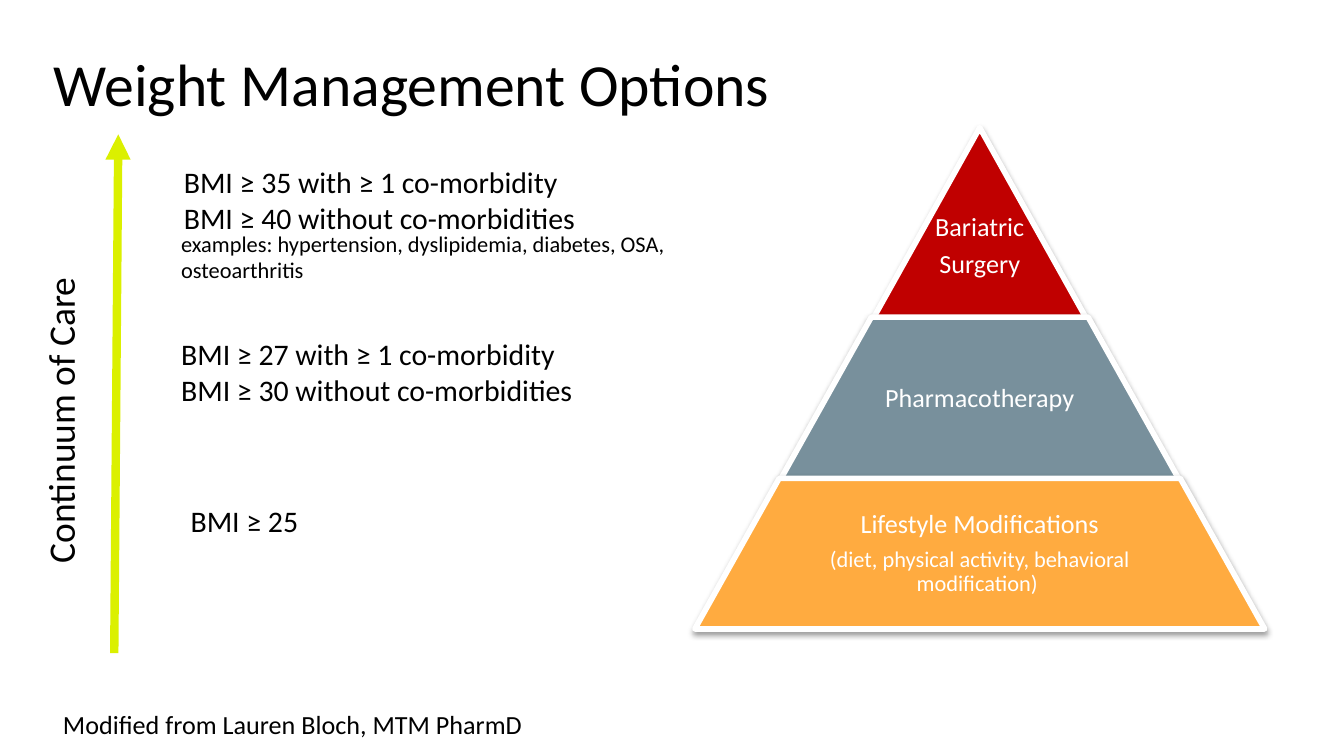
from lxml import etree
from pptx import Presentation
from pptx import util as u
from pptx.dml.color import RGBColor
from pptx.enum import shapes, text
from pptx.oxml import ns

COLORS = {"ink": "000000", "white": "FFFFFF", "arrow": "DBF000",
          "surgery": "C00000", "drugs": "78909C", "lifestyle": "FFAB40"}
FONT = "Calibri"
SLOPE = 0.56  # horizontal run of the pyramid's sides per unit of height
SLIDE_WIDTH = 10
SLIDE_HEIGHT = SLIDE_WIDTH * 9 / 16


def rgb(name):
    return RGBColor.from_string(COLORS[name])


def add_effects(shape, shadow=False):
    """Replace inherited effects with none, or with a soft drop shadow."""
    effects = etree.SubElement(shape._element.spPr, ns.qn("a:effectLst"))
    if shadow:
        drop = etree.SubElement(effects, ns.qn("a:outerShdw"), blurRad=str(u.Pt(3.1)),
                                dist=str(u.Pt(1.6)), dir="5400000", rotWithShape="0")
        black = etree.SubElement(drop, ns.qn("a:srgbClr"), val=COLORS["ink"])
        etree.SubElement(black, ns.qn("a:alpha"), val="38000")


def add_text(slide, box, paragraphs, color="ink", margins=(0.1, 0.05),
             wrap=True, anchor=text.MSO_ANCHOR.TOP, **paragraph_format):
    """Place (words, size) paragraphs in a text box."""
    label = slide.shapes.add_textbox(*map(u.Inches, box))
    frame = label.text_frame
    across, down = map(u.Inches, margins)
    frame_format = {"word_wrap": wrap, "vertical_anchor": anchor,
                    "margin_left": across, "margin_right": across,
                    "margin_top": down, "margin_bottom": down}
    for name, value in frame_format.items():
        setattr(frame, name, value)
    for index, (words, size) in enumerate(paragraphs):
        paragraph = frame.add_paragraph() if index else frame.paragraphs[0]
        paragraph.text = words
        for name, value in paragraph_format.items():
            setattr(paragraph, name, value)
        for run in paragraph.runs:
            for name, value in {"name": FONT, "size": u.Pt(size)}.items():
                setattr(run.font, name, value)
            run.font.color.rgb = rgb(color)
    return label


def add_title(slide, box):
    add_text(slide, box, [("Weight Management Options", 32)], margins=(0.1, 0.1))


def add_pyramid(slide, box):
    """Stack the tiers of care around one centre line."""
    left, top, width, _ = box
    center = left + width / 2
    # top offset, height, base width, text width, text drop, colour, paragraphs
    tiers = [
        (0, 1.45, 1.62, 1.62, 0.16, "surgery", [("Bariatric", 14), ("Surgery", 14)]),
        (1.41, 1.22, 2.98, 1.94, 0, "drugs", [("Pharmacotherapy", 14)]),
        (2.61, 1.12, 4.24, 2.75, 0, "lifestyle",
         [("Lifestyle Modifications", 14),
          ("(diet, physical activity, behavioral modification) ", 12)]),
    ]
    for offset, height, base, text_width, drop, color, paragraphs in tiers:
        tier = slide.shapes.add_shape(
            shapes.MSO_SHAPE.TRAPEZOID, u.Inches(center - base / 2),
            u.Inches(top + offset), u.Inches(base), u.Inches(height))
        tier.adjustments[0] = SLOPE
        tier.fill.solid()
        tier.fill.fore_color.rgb = rgb(color)
        tier.line.color.rgb = rgb("white")
        tier.line.width = u.Pt(3)
        add_effects(tier, shadow=True)
        add_text(slide, (center - text_width / 2, top + offset + drop, text_width, height),
                 paragraphs, "white", margins=(0.02, 0.02),
                 anchor=text.MSO_ANCHOR.MIDDLE, alignment=text.PP_ALIGN.CENTER,
                 line_spacing=0.9, space_after=u.Pt(5))


def add_continuum(slide, box):
    """Upward arrow with a rotated label on its left."""
    left, top, width, height = box
    right, bottom = left + width, top + height
    arrow = slide.shapes.add_connector(
        shapes.MSO_CONNECTOR.STRAIGHT, u.Inches(right - 0.03), u.Inches(bottom),
        u.Inches(right), u.Inches(top))
    arrow.line.color.rgb = rgb("arrow")
    arrow.line.width = u.Pt(4.5)
    etree.SubElement(arrow.line._get_or_add_ln(), ns.qn("a:tailEnd"), type="triangle")
    add_effects(arrow)
    label = add_text(slide, (left - 1.17, top + 1.68, 2.78, 0.44),
                     [("Continuum of Care", 20)])
    label.rotation = 270


def add_criteria(slide, box):
    """BMI thresholds beside the matching tiers."""
    left, top, width, _ = box
    # indent, top offset, width, height, paragraphs
    criteria = [
        (0.02, 0, 4.1, 0.64, [("BMI ≥ 35 with ≥ 1 co-morbidity", 16),
                              ("BMI ≥ 40 without co-morbidities", 16)]),
        (0, 0.49, width, 0.5, [("examples: hypertension, dyslipidemia, diabetes, OSA, "
                                "osteoarthritis", 12)]),
        (0, 1.28, width, 0.64, [("BMI ≥ 27 with ≥ 1 co-morbidity\v"
                                 "BMI ≥ 30 without co-morbidities", 16)]),
        (0.07, 2.52, 2.67, 0.37, [("BMI ≥ 25", 16)]),
    ]
    for indent, offset, text_width, height, paragraphs in criteria:
        add_text(slide, (left + indent, top + offset, text_width, height), paragraphs)


def add_credit(slide, box):
    add_text(slide, box, [("Modified from Lauren Bloch, MTM PharmD", 14)], wrap=False)


def main():
    deck = Presentation()
    deck.slide_width = u.Inches(SLIDE_WIDTH)
    deck.slide_height = u.Inches(SLIDE_HEIGHT)
    slide = deck.slides.add_slide(deck.slide_layouts[6])
    add_pyramid(slide, (5.17, 0.95, 4.24, 3.73))
    add_title(slide, (0.3, 0.25, 9.32, 0.63))
    add_continuum(slide, (0.23, 1, 0.65, 3.86))
    add_criteria(slide, (1.25, 1.17, 4.24, 2.89))
    add_credit(slide, (0.37, 5.22, 3.65, 0.34))
    deck.save("out.pptx")


if __name__ == "__main__":
    main()
